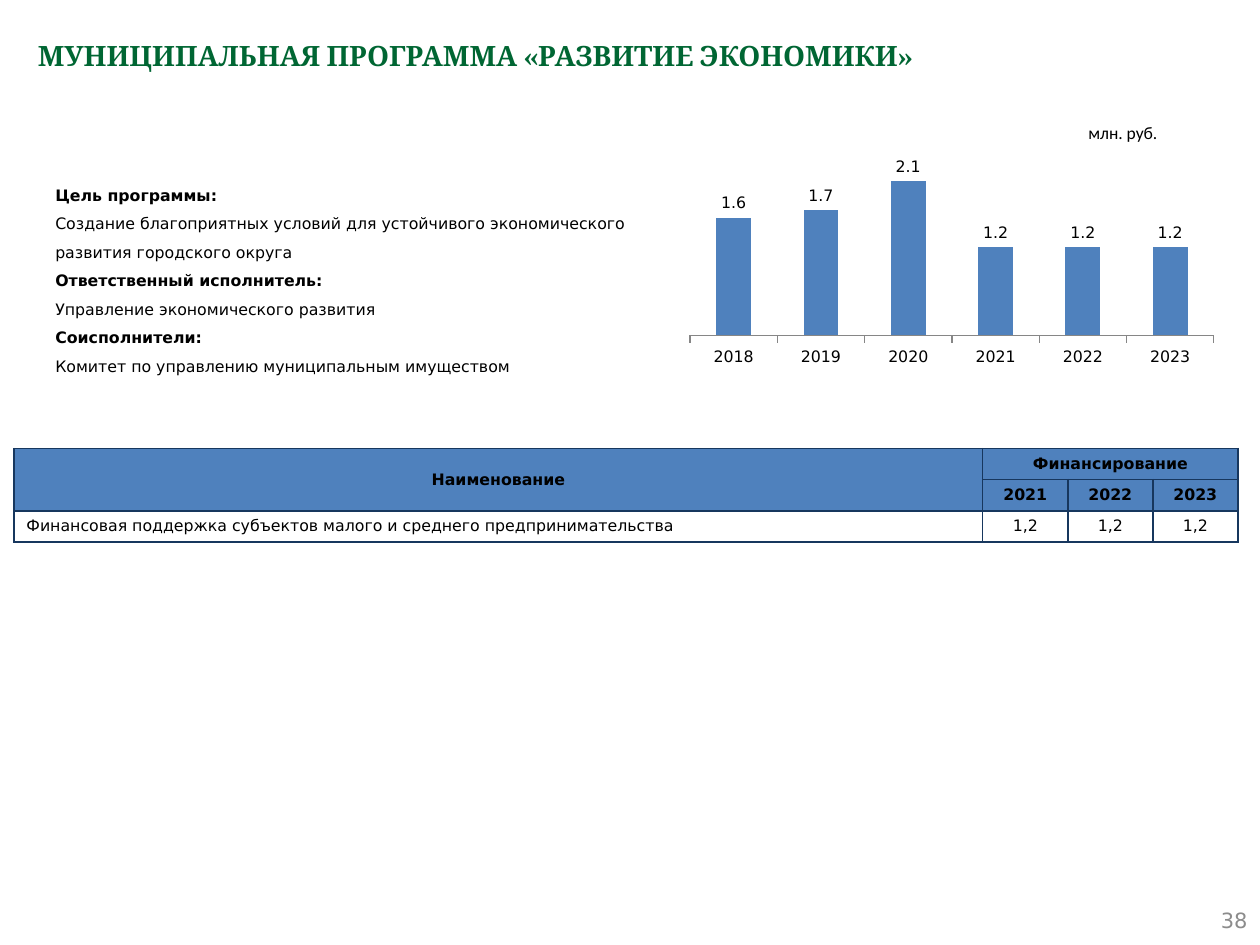
from dataclasses import dataclass

from pptx import Presentation
from pptx.chart.data import CategoryChartData
from pptx.dml.color import RGBColor
from pptx.enum.chart import XL_CHART_TYPE, XL_LABEL_POSITION, XL_TICK_MARK
from pptx.enum.text import MSO_ANCHOR, MSO_AUTO_SIZE, PP_ALIGN
from pptx.oxml import parse_xml
from pptx.oxml.ns import nsdecls
from pptx.util import Inches, Pt

LEFT, MID, RIGHT = PP_ALIGN.LEFT, PP_ALIGN.CENTER, PP_ALIGN.RIGHT
TOP, CENTER = MSO_ANCHOR.TOP, MSO_ANCHOR.MIDDLE
FIT, FIXED = MSO_AUTO_SIZE.SHAPE_TO_FIT_TEXT, MSO_AUTO_SIZE.NONE
COLUMN = XL_CHART_TYPE.COLUMN_CLUSTERED
OUT_END = XL_LABEL_POSITION.OUTSIDE_END
TICK_OUT = XL_TICK_MARK.OUTSIDE

WIDE, HIGH = 10, 7.5
COLS, ROWS = 100, 75


@dataclass(frozen=True)
class Theme:
    ink: str = "000000"
    green: str = "006633"
    blue: str = "4F81BD"
    navy: str = "17375E"
    white: str = "FFFFFF"
    gray: str = "8C8C8C"
    axis: str = "868686"
    serif: str = "Cambria"
    sans: str = "DejaVu Sans"
    plain: str = "Calibri"
    head: int = 16
    page: int = 12
    unit: int = 10
    body: int = 9


def rgb(code):
    return RGBColor.from_string(code)


def style(font, face, size, color, bold=False):
    font.name, font.size, font.bold = face, Pt(size), bold
    font.color.rgb = rgb(color)


def write(frame, *lines, face, size, color, bold=False, align=LEFT,
          anchor=TOP, space=None):
    """Fill a frame; a line is text, or a pair of text and its own bold."""
    frame.vertical_anchor = anchor
    for i, line in enumerate(lines):
        text, heavy = line if isinstance(line, tuple) else (line, bold)
        para = frame.add_paragraph() if i else frame.paragraphs[0]
        para.alignment = align
        if space:
            para.line_spacing = space
        run = para.add_run()
        run.text = text
        style(run.font, face, size, color, heavy)


def border(cell, color, width=1):
    props = cell._tc.get_or_add_tcPr()
    for i, side in enumerate(("lnL", "lnR", "lnT", "lnB")):
        props.insert(i, parse_xml(
            f'<a:{side} {nsdecls("a")} w="{Pt(width)}"><a:solidFill>'
            f'<a:srgbClr val="{color}"/></a:solidFill></a:{side}>'))


class Deck:
    def __init__(self, theme):
        self.theme = theme
        self.prs = Presentation()
        self.prs.slide_width, self.prs.slide_height = Inches(WIDE), Inches(HIGH)
        self.slide = self.prs.slides.add_slide(self.prs.slide_layouts[5])

    def box(self, col, row, cols, rows):
        """Turn grid units into left, top, width and height."""
        x, y = self.prs.slide_width / COLS, self.prs.slide_height / ROWS
        return int(col * x), int(row * y), int(cols * x), int(rows * y)

    def title(self, text, *place):
        t, shape = self.theme, self.slide.shapes.title
        shape.left, shape.top, shape.width, shape.height = self.box(*place)
        shape.text_frame.auto_size = FIXED
        write(shape.text_frame, text, face=t.serif, size=t.head,
              color=t.green, bold=True, space=1.2)

    def text(self, lines, *place, wrap=False, **form):
        frame = self.slide.shapes.add_textbox(*self.box(*place)).text_frame
        frame.word_wrap = wrap
        frame.auto_size = FIXED if wrap else FIT
        write(frame, *lines, **form)

    def chart(self, name, cats, vals, *place):
        t, data = self.theme, CategoryChartData(number_format="0.0")
        data.categories = cats
        data.add_series(name, vals)
        chart = self.slide.shapes.add_chart(
            COLUMN, *self.box(*place), data).chart
        chart.has_legend = chart.has_title = False
        style(chart.font, t.sans, t.body, t.ink)
        value = chart.value_axis
        value.visible = value.has_major_gridlines = False
        value.minimum_scale, value.maximum_scale = 0, 2.5
        axis = chart.category_axis
        axis.major_tick_mark = TICK_OUT
        axis.format.line.color.rgb = rgb(t.axis)
        style(axis.tick_labels.font, t.sans, t.body, t.ink)
        plot = chart.plots[0]
        plot.gap_width, plot.vary_by_categories = 150, False
        fill = plot.series[0].format.fill
        fill.solid()
        fill.fore_color.rgb = rgb(t.blue)
        plot.has_data_labels = True
        tags = plot.data_labels
        tags.show_value, tags.position = True, OUT_END
        tags.number_format, tags.number_format_is_linked = "#,##0.0", False
        style(tags.font, t.sans, t.body, t.ink)

    def table(self, grid, widths, heads, spans, *place):
        """Draw a table; each span is a pair of corner cells to merge."""
        t = self.theme
        table = self.slide.shapes.add_table(
            len(grid), len(widths), *self.box(*place)).table
        for col, width in zip(table.columns, widths):
            col.width = self.box(0, 0, width, 0)[2]
        for i, row in enumerate(grid):
            head = i < heads
            for j, text in enumerate(row):
                cell = table.cell(i, j)
                cell.fill.solid()
                cell.fill.fore_color.rgb = rgb(t.blue if head else t.white)
                border(cell, t.navy)
                cell.vertical_anchor = CENTER
                if text:
                    write(cell.text_frame, text, face=t.sans, size=t.body,
                          color=t.ink, bold=head, anchor=None,
                          align=MID if head or j else LEFT)
        for start, end in spans:
            table.cell(*start).merge(table.cell(*end))


def main():
    theme = Theme()
    deck = Deck(theme)
    body = dict(face=theme.sans, size=theme.body, color=theme.ink)

    deck.title("МУНИЦИПАЛЬНАЯ ПРОГРАММА «РАЗВИТИЕ ЭКОНОМИКИ»", 2, 2, 96, 7.9)
    deck.text(["38"], 76.7, 71, 23.3, 4, wrap=True, face=theme.sans,
              size=theme.page, color=theme.gray, align=RIGHT, anchor=CENTER)
    deck.chart("млн. руб.", ["2018", "2019", "2020", "2021", "2022", "2023"],
               [1.6, 1.7, 2.1, 1.2, 1.2, 1.2], 53.9, 11.7, 43.3, 17.7)

    years = ["2021", "2022", "2023"]
    grid = [
        ["Наименование", "Финансирование", "", ""],
        ["", *years],
        ["Финансовая поддержка субъектов малого и среднего "
         "предпринимательства", *["1,2"] * len(years)],
    ]
    deck.table(grid, [76.9] + [6.75] * len(years), 2,
               [((0, 0), (1, 0)), ((0, 1), (0, 3))], 1.1, 35.6, 97.1, 7.4)

    deck.text([
        ("Цель программы:", True),
        "Создание благоприятных условий для устойчивого экономического",
        "развития городского округа",
        ("Ответственный исполнитель:", True),
        "Управление экономического развития",
        ("Соисполнители:", True),
        "Комитет по управлению муниципальным имуществом",
    ], 3.4, 13.5, 47.2, 16.6, space=1.5, **body)
    deck.text(["млн. руб."], 85.4, 9.2, 8, 2.7, face=theme.plain,
              size=theme.unit, color=theme.ink)
    deck.prs.save("out.pptx")


if __name__ == "__main__":
    main()
